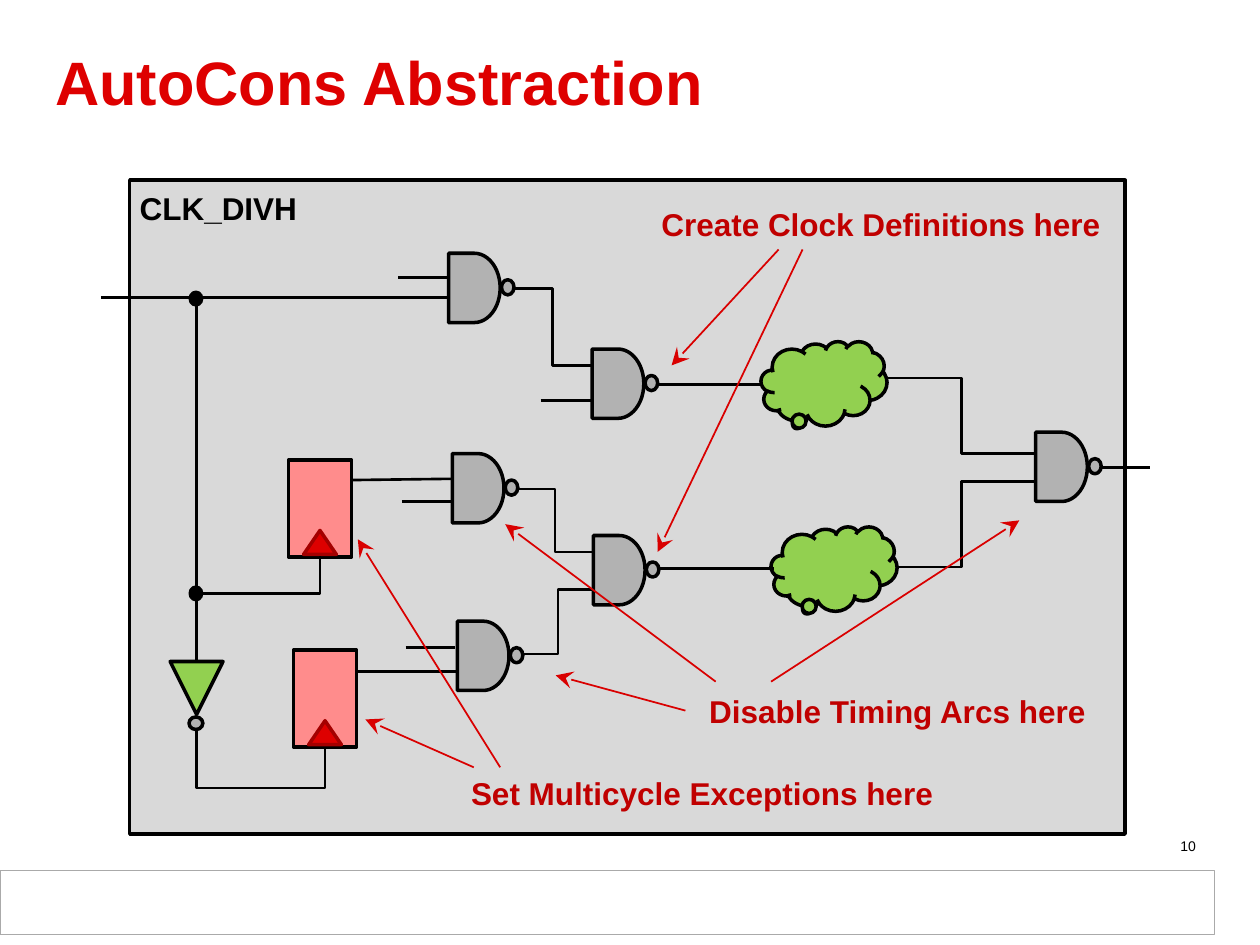
from lxml import etree
from pptx import Presentation
from pptx.dml.color import RGBColor
from pptx.enum.shapes import MSO_CONNECTOR, MSO_SHAPE
from pptx.enum.text import MSO_ANCHOR, PP_ALIGN
from pptx.oxml.ns import qn
from pptx.util import Inches, Pt

BLACK = RGBColor(0x00, 0x00, 0x00)
WHITE = RGBColor(0xFF, 0xFF, 0xFF)
PANEL_GRAY = RGBColor(0xD9, 0xD9, 0xD9)
GATE_GRAY = RGBColor(0xB2, 0xB2, 0xB2)
FOOTER_GRAY = RGBColor(0xAA, 0xAA, 0xAA)
TITLE_RED = RGBColor(0xDE, 0x00, 0x00)
DARK_RED = RGBColor(0xA4, 0x00, 0x00)
ARROW_RED = RGBColor(0xD9, 0x00, 0x00)
LABEL_RED = RGBColor(0xC0, 0x00, 0x00)
PINK = RGBColor(0xFF, 0x8C, 0x8C)
GREEN = RGBColor(0x92, 0xD0, 0x50)


def write_text(frame, text, size=18, color=LABEL_RED, bold=True,
               align=PP_ALIGN.LEFT, anchor=MSO_ANCHOR.TOP, wrap=False, spacing=None):
    frame.word_wrap = wrap
    frame.vertical_anchor = anchor
    paragraph = frame.paragraphs[0]
    paragraph.alignment = align
    paragraph.line_spacing = spacing
    run = paragraph.add_run()
    run.text = text
    run.font.name = "Arial"
    run.font.size = Pt(size)
    run.font.bold = bold
    run.font.color.rgb = color


class CircuitSlide:
    """Holds the slide and draws the parts of the circuit on it."""

    def __init__(self, slide):
        self.shapes = slide.shapes

    def shape(self, kind, left, top, width, height, fill, line=BLACK, weight=2):
        shape = self.shapes.add_shape(
            kind, Inches(left), Inches(top), Inches(width), Inches(height))
        shape.shadow.inherit = False
        shape.fill.solid()
        shape.fill.fore_color.rgb = fill
        shape.line.color.rgb = line
        shape.line.width = Pt(weight)
        return shape

    def text(self, text, left, top, width, height, **style):
        box = self.shapes.add_textbox(
            Inches(left), Inches(top), Inches(width), Inches(height))
        write_text(box.text_frame, text, **style)

    def connector(self, start, end, color=BLACK, weight=1.5, kind=MSO_CONNECTOR.STRAIGHT):
        connector = self.shapes.add_connector(
            kind, *(Inches(value) for value in (*start, *end)))
        connector.line.color.rgb = color
        connector.line.width = Pt(weight)
        etree.SubElement(connector._element.spPr, qn("a:effectLst"))
        return connector

    def elbow(self, start, end, preset="bentConnector3", adjustments=()):
        connector = self.connector(start, end, kind=MSO_CONNECTOR.ELBOW)
        geometry = connector._element.spPr.find(qn("a:prstGeom"))
        geometry.set("prst", preset)
        guides = geometry.get_or_add_avLst()
        for number, value in enumerate(adjustments, 1):
            etree.SubElement(guides, qn("a:gd"), name=f"adj{number}",
                             fmla=f"val {round(value * 100000)}")

    def arrow(self, start, end):
        connector = self.connector(start, end, ARROW_RED, 1)
        etree.SubElement(connector.line._get_or_add_ln(), qn("a:tailEnd"),
                         type="stealth", w="lg", len="lg")

    def nand_gate(self, left, top):
        self.shape(MSO_SHAPE.FLOWCHART_DELAY, left, top, 0.41, 0.55, GATE_GRAY)
        self.shape(MSO_SHAPE.FLOWCHART_CONNECTOR, left + 0.42, top + 0.21, 0.1, 0.12, GATE_GRAY)

    def flip_flop(self, left, top):
        self.shape(MSO_SHAPE.RECTANGLE, left, top, 0.5, 0.77, PINK)
        self.shape(MSO_SHAPE.ISOSCELES_TRIANGLE, left + 0.12, top + 0.56, 0.26, 0.19,
                   TITLE_RED, DARK_RED)

    def cloud(self, left, top):
        cloud = self.shape(MSO_SHAPE.CLOUD_CALLOUT, left, top, 1, 0.67, GREEN)
        cloud.adjustments[0] = -0.208
        cloud.adjustments[1] = 0.468

    def inverter(self, left, top):
        triangle = self.shape(MSO_SHAPE.ISOSCELES_TRIANGLE, left, top, 0.42, 0.42, GREEN)
        triangle.rotation = 180
        self.shape(MSO_SHAPE.FLOWCHART_CONNECTOR, left + 0.15, top + 0.44, 0.11, 0.1, GATE_GRAY)

    def junction(self, left, top):
        self.shape(MSO_SHAPE.FLOWCHART_CONNECTOR, left, top, 0.09, 0.1, BLACK)


def main():
    presentation = Presentation()
    presentation.slide_width = Inches(10)
    presentation.slide_height = Inches(7.5)
    circuit = CircuitSlide(presentation.slides.add_slide(presentation.slide_layouts[6]))

    # Frame, title and page number
    circuit.shape(MSO_SHAPE.RECTANGLE, 0, 6.91, 9.64, 0.51, WHITE, FOOTER_GRAY, 0.75)
    circuit.shape(MSO_SHAPE.RECTANGLE, 1.03, 1.43, 7.9, 5.19, PANEL_GRAY)
    circuit.text("AutoCons Abstraction", 0.34, 0.32, 9.25, 0.73, size=35, color=TITLE_RED,
                 anchor=MSO_ANCHOR.MIDDLE, wrap=True, spacing=0.85)
    circuit.text("10", 7.26, 6.6, 2.33, 0.23, size=8, color=BLACK, bold=False,
                 align=PP_ALIGN.RIGHT, wrap=True)

    # Gates, flip-flops, logic clouds and inverter
    for left, top in ((3.56, 2.01), (3.59, 3.6), (3.63, 4.93),
                      (4.71, 4.25), (4.7, 2.77), (8.22, 3.43)):
        circuit.nand_gate(left, top)
    for left, top in ((2.29, 3.65), (2.33, 5.16)):
        circuit.flip_flop(left, top)
    for left, top in ((6.04, 2.71), (6.12, 4.18)):
        circuit.cloud(left, top)
    circuit.inverter(1.35, 5.25)

    # Straight wires
    for start, end in (
        ((0.8, 2.36), (3.56, 2.36)),
        ((1.56, 2.36), (1.56, 5.25)),
        ((2.8, 3.81), (3.59, 3.8)),
        ((2.83, 5.33), (3.64, 5.33)),
        ((3.16, 2.2), (3.56, 2.2)),
        ((3.19, 3.98), (3.59, 3.98)),
        ((3.22, 5.14), (3.61, 5.14)),
        ((5.22, 3.05), (6.04, 3.05)),
        ((5.22, 4.51), (6.14, 4.51)),
        ((4.29, 3.18), (4.69, 3.18)),
        ((8.73, 3.71), (9.13, 3.71)),
    ):
        circuit.connector(start, end)

    # Bent wires
    circuit.elbow((4.1, 3.88), (4.71, 4.38))
    circuit.elbow((4.07, 2.29), (4.7, 2.9))
    circuit.elbow((4.15, 5.19), (4.71, 4.68))
    circuit.elbow((7.04, 3), (8.22, 3.6))
    circuit.elbow((7.11, 4.5), (8.22, 3.82), adjustments=(0.47,))
    circuit.elbow((1.56, 5.78), (2.58, 5.93), "bentConnector4", (0, 3.16))
    circuit.elbow((1.56, 4.71), (2.54, 4.41), "bentConnector2")

    for top in (2.32, 4.66):
        circuit.junction(1.51, top)

    # Labels and their arrows
    circuit.text("CLK_DIVH", 1.01, 1.45, 1.46, 0.4, color=BLACK)
    circuit.text("Create Clock Definitions here", 5.15, 1.58, 3.72, 0.4)
    circuit.text("Disable Timing Arcs here", 5.53, 5.44, 3.22, 0.4)
    circuit.text("Set Multicycle Exceptions here", 3.64, 6.09, 3.9, 0.4)
    for start, end in (
        ((6.18, 1.98), (5.33, 2.9)),
        ((6.37, 1.98), (5.22, 4.38)),
        ((5.68, 5.41), (4.01, 4.16)),
        ((5.44, 5.64), (4.41, 5.36)),
        ((6.12, 5.41), (8.09, 4.13)),
        ((3.76, 6.09), (2.9, 5.71)),
        ((3.97, 6.09), (2.84, 4.28)),
    ):
        circuit.arrow(start, end)

    presentation.save("out.pptx")


if __name__ == "__main__":
    main()
